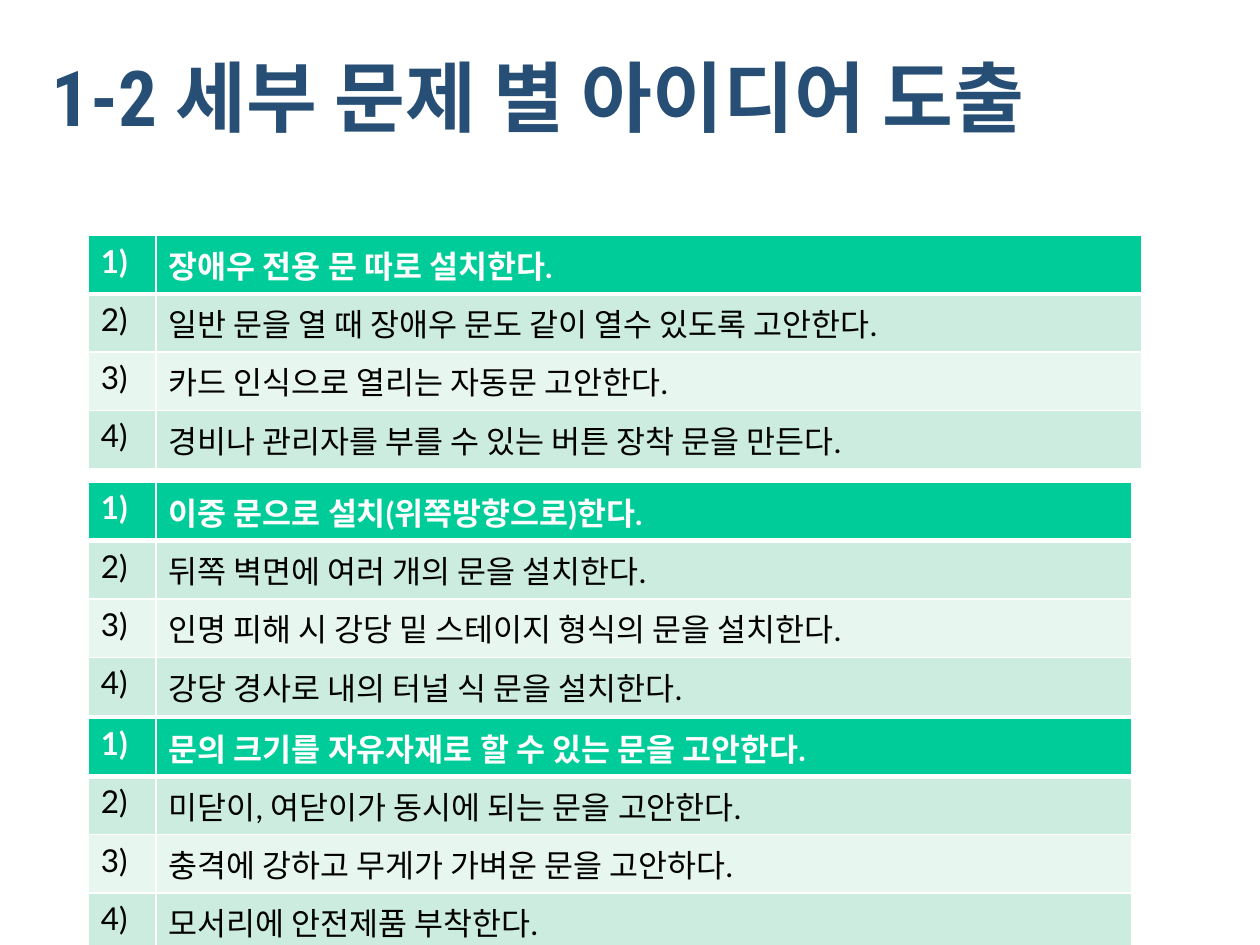
from lxml.etree import SubElement
from pptx import Presentation
from pptx.dml.color import RGBColor
from pptx.enum.text import MSO_ANCHOR, MSO_AUTO_SIZE, PP_ALIGN
from pptx.oxml import parse_xml
from pptx.oxml.ns import nsdecls, qn
from pptx.util import Inches, Pt

THEME = {
    "title": {"name": "Roboto Condensed", "size": Pt(44), "bold": True, "color": "274E75"},
    "header": {"name": "Lato", "size": Pt(18), "bold": True, "color": "FFFFFF"},
    "idea": {"name": "Lato", "size": Pt(18), "bold": False, "color": "000000"},
    "row_fills": ["00CC99", "CBECDE", "E7F6EF", "CBECDE"],
    "border": "FFFFFF",
}
ROW_HEIGHTS = [0.39, 0.38, 0.29, 0.36]
NUMBER_WIDTH = 0.54
IDEA_GROUPS = [
    (1.87, 7.82, [
        "장애우 전용 문 따로 설치한다.",
        "일반 문을 열 때 장애우 문도 같이 열수 있도록 고안한다.",
        "카드 인식으로 열리는 자동문 고안한다.",
        "경비나 관리자를 부를 수 있는 버튼 장착 문을 만든다.",
    ]),
    (3.83, 7.74, [
        "이중 문으로 설치(위쪽방향으로)한다.",
        "뒤쪽 벽면에 여러 개의 문을 설치한다.",
        "인명 피해 시 강당 밑 스테이지 형식의 문을 설치한다.",
        "강당 경사로 내의 터널 식 문을 설치한다.",
    ]),
    (5.7, 7.74, [
        "문의 크기를 자유자재로 할 수 있는 문을 고안한다.",
        "미닫이, 여닫이가 동시에 되는 문을 고안한다.",
        "충격에 강하고 무게가 가벼운 문을 고안하다.",
        "모서리에 안전제품 부착한다.",
    ]),
]


def write_text(frame, text, style):
    run = frame.paragraphs[0].add_run()
    run.text = text
    for key, value in style.items():
        if key == "color":
            run.font.color.rgb = RGBColor.from_string(value)
        else:
            setattr(run.font, key, value)


def set_borders(cell, widths):
    properties = cell._tc.get_or_add_tcPr()
    for index, (side, width) in enumerate(widths.items()):
        line = parse_xml(f'<a:ln{side} {nsdecls("a")} w="{Pt(width)}"/>')
        fill = SubElement(line, qn("a:solidFill"))
        SubElement(fill, qn("a:srgbClr"), val=THEME["border"])
        properties.insert(index, line)


prs = Presentation()
prs.slide_width, prs.slide_height = Inches(10), Inches(7.5)
slide = prs.slides.add_slide(prs.slide_layouts[5])

heading = slide.shapes.title
heading_box = {"left": 0.31, "top": 0.47, "width": 10, "height": 0.58}
for key, value in heading_box.items():
    setattr(heading, key, Inches(value))
heading_format = {
    "auto_size": MSO_AUTO_SIZE.NONE,
    "vertical_anchor": MSO_ANCHOR.MIDDLE,
    "word_wrap": True,
}
for key, value in heading_format.items():
    setattr(heading.text_frame, key, value)
heading.text_frame.paragraphs[0].alignment = PP_ALIGN.LEFT
write_text(heading.text_frame, "1-2 세부 문제 별 아이디어 도출", THEME["title"])

for top, idea_width, ideas in IDEA_GROUPS:
    group = slide.shapes.add_table(
        len(ideas), 2, Inches(0.7), Inches(top),
        Inches(NUMBER_WIDTH + idea_width), Inches(sum(ROW_HEIGHTS)),
    ).table
    for column, width in zip(group.columns, [NUMBER_WIDTH, idea_width]):
        column.width = Inches(width)
    for row_index, idea in enumerate(ideas):
        group.rows[row_index].height = Inches(ROW_HEIGHTS[row_index])
        style = THEME["idea"] if row_index else THEME["header"]
        widths = {
            "L": 1,
            "R": 1,
            "T": 3 if row_index == 1 else 1,
            "B": 3 if row_index == 0 else 1,
        }
        for column_index, text in enumerate([f"{row_index + 1})", idea]):
            cell = group.cell(row_index, column_index)
            cell.fill.solid()
            cell.fill.fore_color.rgb = RGBColor.from_string(THEME["row_fills"][row_index])
            set_borders(cell, widths)
            write_text(cell.text_frame, text, style)

prs.save("out.pptx")
